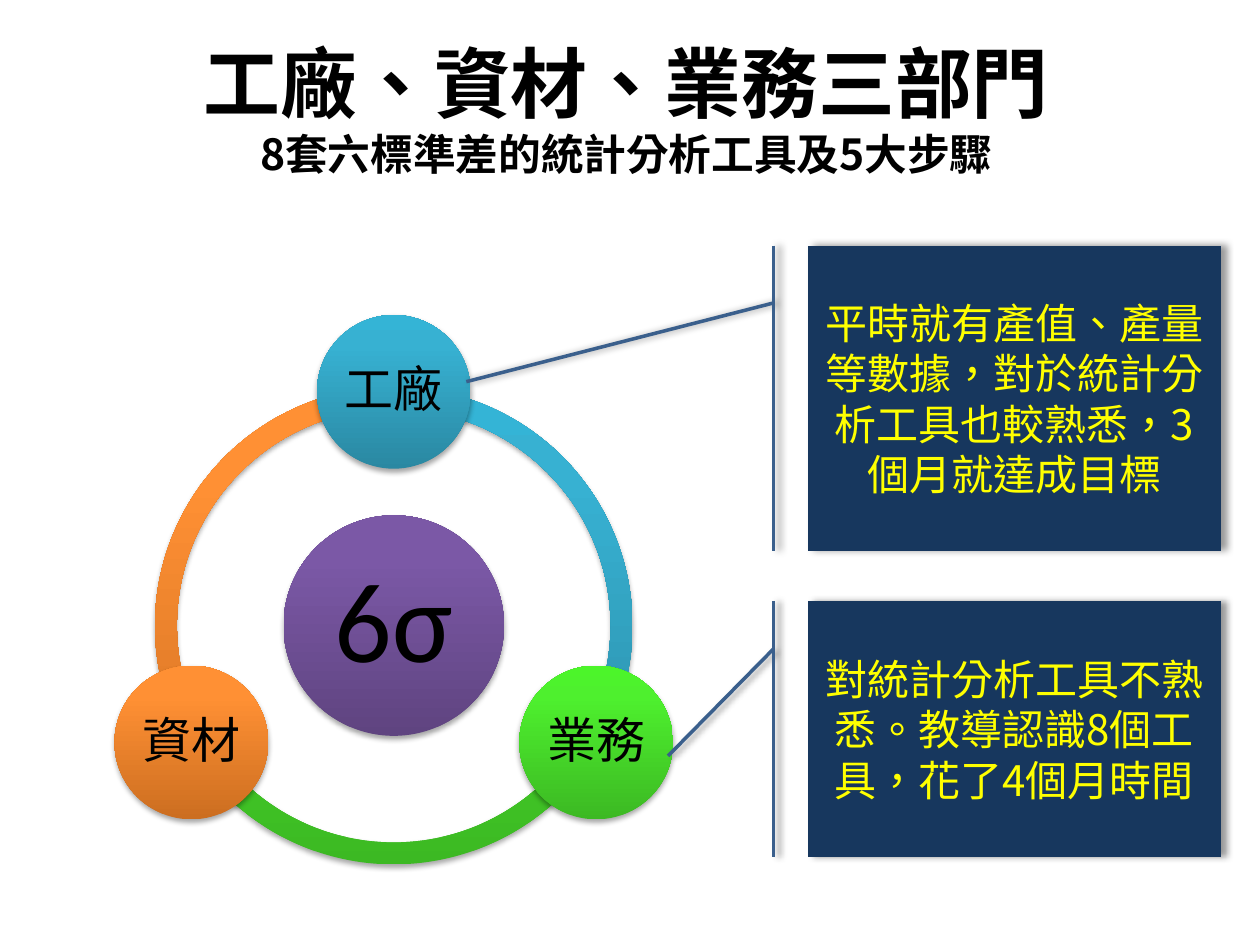
from copy import deepcopy
from math import cos, radians, sin

from lxml import etree
from pptx import Presentation
from pptx.dml.color import RGBColor
from pptx.enum.lang import MSO_LANGUAGE_ID as Lang
from pptx.enum.shapes import MSO_SHAPE as Shape
from pptx.enum.text import MSO_ANCHOR as Anchor, MSO_AUTO_SIZE as AutoSize, PP_ALIGN as Align
from pptx.oxml.ns import qn
from pptx.util import Inches, Pt


def color(hex_code):
    return RGBColor.from_string(hex_code)


class DepartmentSlide:
    """Holds the style and the current slide, and draws each kind of element."""

    cjk_font = "Noto Sans CJK SC"
    label_font = "Calibri"
    ink = "000000"
    panel = "17375E"
    panel_line = "3A5F8C"
    panel_text = "FFFF00"

    def __init__(self, deck):
        self.slide = deck.slides.add_slide(deck.slide_layouts[5])

    def run(self, paragraph, text, size, font_name, ink, bold=False):
        run = paragraph.add_run()
        run.text = text
        font = run.font
        font.size, font.bold, font.name = Pt(size), bold, font_name
        font.color.rgb = color(ink)
        font.language_id = Lang.TRADITIONAL_CHINESE
        if font_name == self.cjk_font:
            latin = run._r.rPr.find(qn("a:latin"))
            latin.addnext(etree.Element(qn("a:ea"), typeface=font_name))

    def shadow(self, shape, alpha, blur, distance, angle):
        shape.shadow.inherit = False
        effects = shape._element.spPr.find(qn("a:effectLst"))
        outer = etree.SubElement(
            effects, qn("a:outerShdw"), blurRad=str(Pt(blur)), dist=str(Pt(distance)),
            dir=str(angle * 60000), algn="ctr", rotWithShape="0")
        tint = etree.SubElement(outer, qn("a:srgbClr"), val=self.ink)
        etree.SubElement(tint, qn("a:alpha"), val=str(alpha * 1000))

    def glossy(self, preset, center, size, shades):
        x, y = center
        shape = self.slide.shapes.add_shape(
            preset, Inches(x - size / 2), Inches(y - size / 2), Inches(size), Inches(size))
        shape.fill.gradient()
        stop_list = shape._element.spPr.find(qn("a:gradFill")).find(qn("a:gsLst"))
        stop_list.append(deepcopy(stop_list[0]))
        for stop, position, shade in zip(shape.fill.gradient_stops, (0, 0.8, 1), shades):
            stop.position = position
            stop.color.rgb = color(shade)
        shape.fill.gradient_angle = 90
        shape.line.fill.background()
        self.shadow(shape, 35, 3.1, 1.8, 90)
        return shape

    def arc(self, center, size, start, end, shades):
        arc = self.glossy(Shape.BLOCK_ARC, center, size, shades)
        for index, value in enumerate((start * 0.6, end * 0.6, 0.046)):
            arc.adjustments[index] = value

    def circle(self, center, size, label, label_size, shades):
        frame = self.glossy(Shape.OVAL, center, size, shades).text_frame
        frame.margin_left = frame.margin_right = frame.margin_top = frame.margin_bottom = 0
        frame.word_wrap = False
        frame.vertical_anchor = Anchor.MIDDLE
        paragraph = frame.paragraphs[0]
        paragraph.alignment = Align.CENTER
        paragraph.line_spacing = 0.9
        self.run(paragraph, label, label_size, self.label_font, self.ink)

    def callout(self, top, height, pointer, text):
        callout = self.slide.shapes.add_shape(
            Shape.LINE_CALLOUT_1_ACCENT_BAR, Inches(6.41), Inches(top), Inches(3.28), Inches(height))
        for index, value in enumerate((0.188, -0.083, *pointer)):
            callout.adjustments[index] = value
        callout.fill.solid()
        callout.fill.fore_color.rgb = color(self.panel)
        callout.line.color.rgb = color(self.panel_line)
        callout.line.width = Pt(2)
        self.shadow(callout, 40, 4, 3, 0)
        frame = callout.text_frame
        frame.word_wrap = True
        frame.vertical_anchor = Anchor.MIDDLE
        frame.paragraphs[0].alignment = Align.CENTER
        self.run(frame.paragraphs[0], text, 24, self.cjk_font, self.panel_text)

    def title(self, heading, subheading):
        title = self.slide.shapes.title
        title.left, title.top = Inches(0.47), Inches(0.23)
        title.width, title.height = Inches(9), Inches(1.25)
        frame = title.text_frame
        frame.auto_size = AutoSize.NONE
        frame.vertical_anchor = Anchor.MIDDLE
        paragraph = frame.paragraphs[0]
        paragraph.alignment = Align.CENTER
        self.run(paragraph, heading, 43.9, self.cjk_font, self.ink, bold=True)
        paragraph.add_line_break()
        self.run(paragraph, subheading, 24.4, self.cjk_font, self.ink, bold=True)


def main():
    deck = Presentation()
    deck.slide_width, deck.slide_height = Inches(10), Inches(7.5)
    page = DepartmentSlide(deck)
    page.title("工廠、資材、業務三部門", "8套六標準差的統計分析工具及5大步驟")

    hub = (3.125, 4.965)
    orbit = 1.855
    departments = [
        ("工廠", 270, ("2A88A2", "37B1D2", "34B4D6")),
        ("業務", 30, ("3CB923", "4EF02E", "4CF52A")),
        ("資材", 150, ("CC6E20", "FF9034", "FF9136")),
    ]
    for _, angle, shades in reversed(departments):
        page.arc(hub, 3.79, angle, (angle + 120) % 360, shades)
    page.circle(hub, 1.75, "6σ", 65, ("5F4480", "7B58A6", "7C57A8"))
    for name, angle, shades in departments:
        turn = radians(angle)
        center = (hub[0] + orbit * cos(turn), hub[1] + orbit * sin(turn))
        page.circle(center, 1.22, name, 28, shades)

    page.callout(1.95, 2.42, (0.446, -0.826),
                 "平時就有產值、產量等數據，對於統計分析工具也較熟悉，3個月就達成目標")
    page.callout(4.77, 2.03, (0.606, -0.338),
                 "對統計分析工具不熟悉。教導認識8個工具，花了4個月時間")
    deck.save("out.pptx")


if __name__ == "__main__":
    main()
